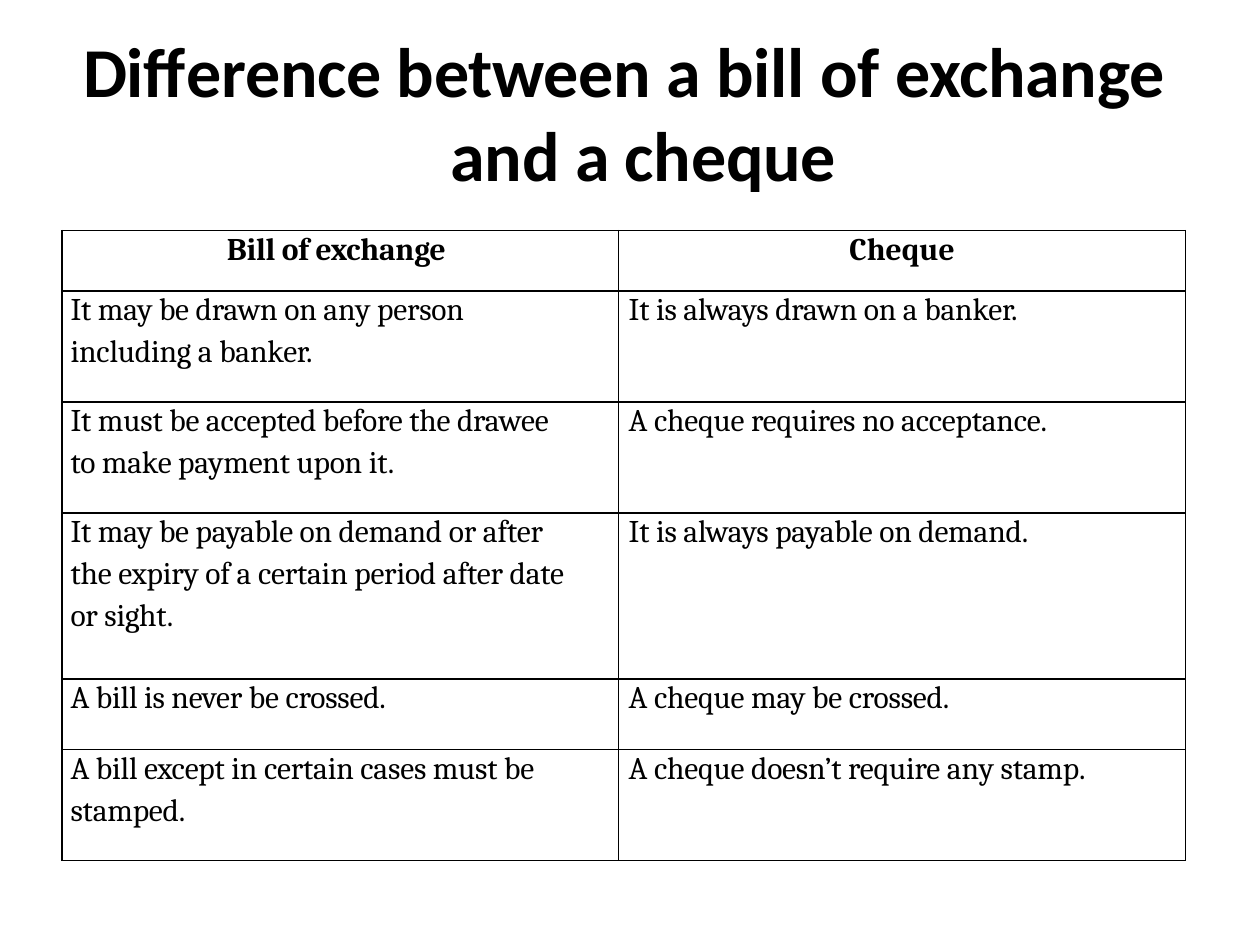
from lxml import etree
from pptx import Presentation
from pptx import util as u
from pptx.dml import color
from pptx.enum import text
from pptx.oxml import ns

WIDE, HIGH = 10, 7.5
HUES = {"ink": "000000", "page": "FFFFFF"}
COLS = (4.42, 4.5)
ROWS = (0.48, 0.88, 0.88, 1.32, 0.56, 0.88)
PADS = (0.07, 0.08)
TITLE = "Difference between a bill of exchange and a cheque"
HEADS = ("Bill of exchange", "Cheque")
BODY = (
    (("It may be drawn on any person", "including a banker."),
     ("It is always drawn on a banker.",)),
    (("It must be accepted before the drawee", "to make payment upon it."),
     ("A cheque requires no acceptance.",)),
    (("It may be payable on demand or after",
      "the expiry of a certain period after date", "or sight."),
     ("It is always payable on demand.",)),
    (("A bill is never be crossed.",), ("A cheque may be crossed.",)),
    (("A bill except in certain cases must be", "stamped."),
     ("A cheque doesn’t require any stamp.",)),
)


def write(frame, lines, font="Cambria", size=18, bold=False, align=None,
          left=0, hang=0, first=0.7, rest=3.2, track=-0.1):
    """Put one paragraph per line; left and hang in inches, gaps in points."""
    frame.word_wrap = True
    for i, line in enumerate(lines):
        para = frame.paragraphs[0] if i == 0 else frame.add_paragraph()
        para.alignment = align or text.PP_ALIGN.LEFT
        para.space_before = u.Pt(rest if i else first)
        props = para._p.get_or_add_pPr()
        props.set("marL", str(u.Inches(left)))
        props.set("indent", str(u.Inches(-hang)))
        run = para.add_run()
        run.text = line
        run.font.name, run.font.size, run.font.bold = font, u.Pt(size), bold
        run.font.color.rgb = color.RGBColor.from_string(HUES["ink"])
        run._r.get_or_add_rPr().set("spc", str(round(track * 100)))


def inset(part):
    part.margin_left = part.margin_right = part.margin_bottom = 0
    part.margin_top = u.Inches(0.01)


def rule(cell, width=1):
    """Draw the four borders of a cell."""
    props = cell._tc.get_or_add_tcPr()
    for i, side in enumerate("LRTB"):
        line = etree.Element(ns.qn("a:ln" + side), w=str(u.Pt(width)))
        fill = etree.SubElement(line, ns.qn("a:solidFill"))
        etree.SubElement(fill, ns.qn("a:srgbClr"), val=HUES["ink"])
        props.insert(i, line)


def title(slide, box):
    frame = slide.shapes.add_textbox(*map(u.Inches, box)).text_frame
    inset(frame)
    write(frame, [TITLE], font="Calibri", size=40, bold=True,
          left=box[2] / 3 + 0.02, hang=box[2] / 3 + 0.02, first=0.9,
          track=-0.15)


def table(slide, box):
    grid = slide.shapes.add_table(
        len(ROWS), len(COLS), *map(u.Inches, box)).table
    grid.first_row = grid.horz_banding = False
    for col, size in zip(grid.columns, COLS):
        col.width = u.Inches(size)
    for row, size in zip(grid.rows, ROWS):
        row.height = u.Inches(size)
    for cell in grid.iter_cells():
        inset(cell)
        cell.fill.background()
        rule(cell)
    write(grid.cell(0, 0).text_frame, [HEADS[0]], bold=True, left=1.31)
    write(grid.cell(0, 1).text_frame, [HEADS[1]], bold=True,
          align=text.PP_ALIGN.CENTER, track=0)
    for r, pair in enumerate(BODY, 1):
        for c, lines in enumerate(pair):
            write(grid.cell(r, c).text_frame, lines, left=PADS[c])


def main():
    deck = Presentation()
    deck.slide_width, deck.slide_height = u.Inches(WIDE), u.Inches(HIGH)
    slide = deck.slides.add_slide(deck.slide_layouts[6])
    back = slide.background.fill
    back.solid()
    back.fore_color.rgb = color.RGBColor.from_string(HUES["page"])
    title(slide, (0.066 * WIDE, 0.028 * HIGH, 0.869 * WIDE, 0.18 * HIGH))
    table(slide, (0.049 * WIDE, 0.244 * HIGH, sum(COLS), sum(ROWS)))
    deck.save("out.pptx")


if __name__ == "__main__":
    main()
